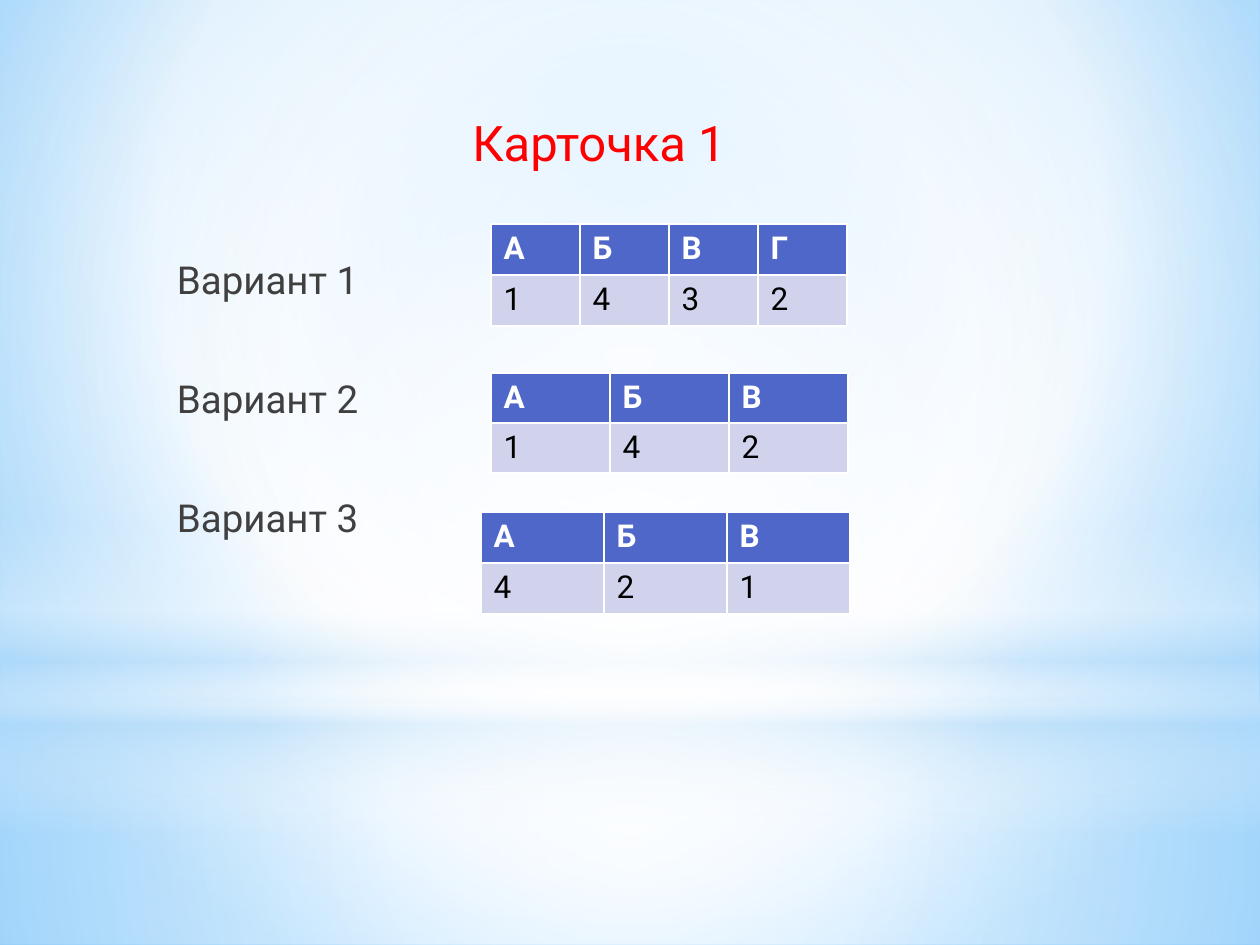
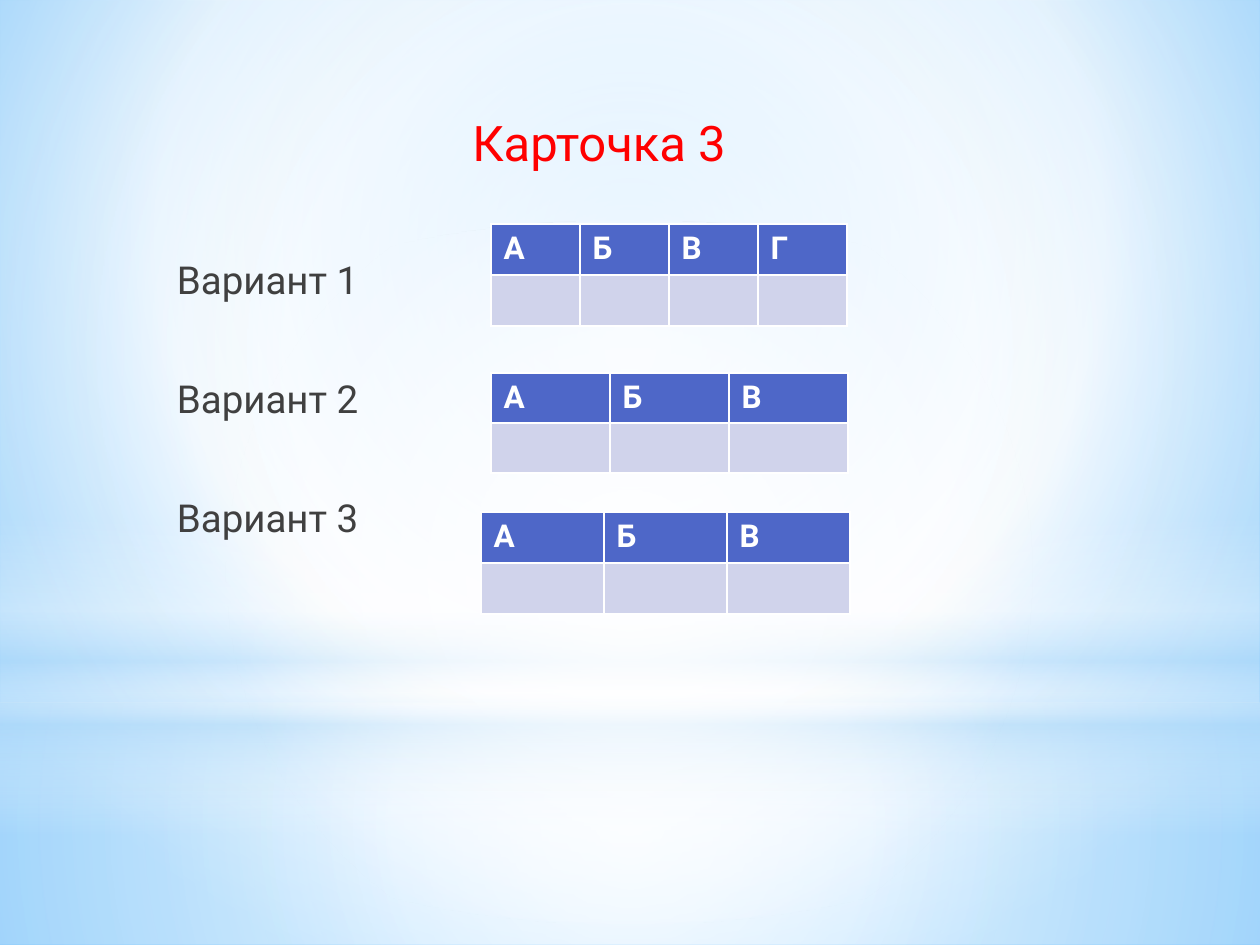
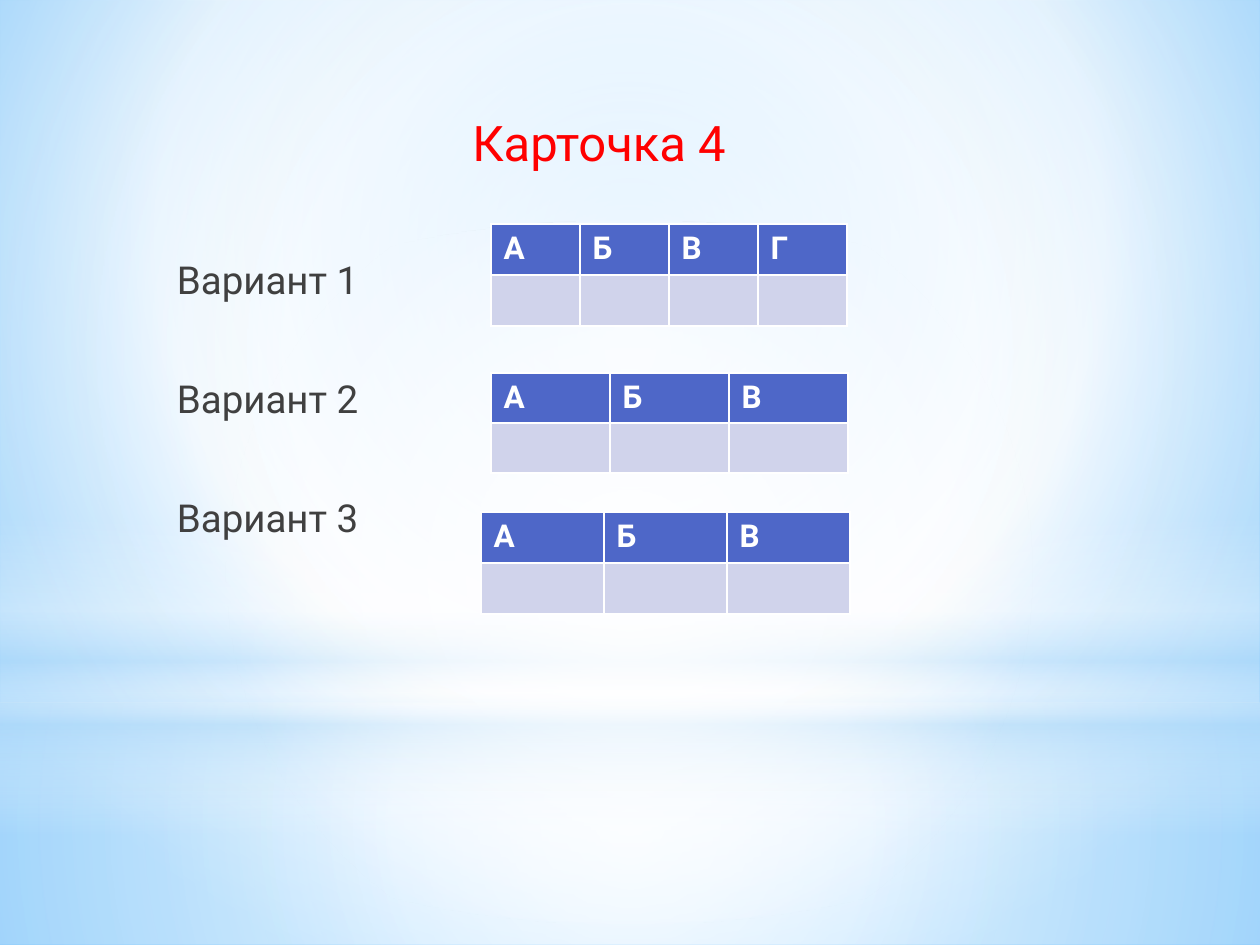
from dataclasses import dataclass

from lxml.etree import SubElement
from pptx import Presentation
from pptx.dml.color import RGBColor
from pptx.enum.shapes import MSO_SHAPE
from pptx.enum.text import MSO_ANCHOR, MSO_AUTO_SIZE, PP_ALIGN
from pptx.oxml.ns import qn
from pptx.slide import Slide, SlideLayout
from pptx.text.text import Font, TextFrame
from pptx.util import Emu, Pt

PX_PER_INCH = 126
EMU_PER_INCH = 914400


@dataclass(frozen=True)
class Theme:
    font: str = "Roboto"
    title: str = "FF0000"
    text: str = "404040"
    header_fill: str = "4E67C8"
    header_text: str = "FFFFFF"
    answer_fill: str = "D0D3EB"
    answer_text: str = "000000"
    white: str = "FFFFFF"
    mist: str = "B4DCFA"
    sky: str = "9ED5FF"
    deep_sky: str = "5BB9FF"
    title_size: int = 28
    list_size: int = 22
    cell_size: int = 18
    list_gap: float = 41.6


THEME = Theme()


@dataclass(frozen=True)
class Box:
    left: int
    top: int
    width: int
    height: int

    def emu(self) -> tuple[Emu, ...]:
        return tuple(px(side) for side in (self.left, self.top, self.width, self.height))


@dataclass(frozen=True)
class Stop:
    position: int
    color: str
    opacity: int = 100


@dataclass(frozen=True)
class Gradient:
    """Radial around the focus insets (left, top, right, bottom), or vertical without them."""
    stops: tuple[Stop, ...]
    focus: tuple[int, int, int, int] | None = (50, 50, 50, 50)


@dataclass(frozen=True)
class Band:
    shape: MSO_SHAPE
    box: Box
    gradient: Gradient


@dataclass(frozen=True)
class AnswerTable:
    left: int
    top: int
    column_width: int
    row_height: int
    letters: str


@dataclass(frozen=True)
class Card:
    title: str
    answers: tuple[str, str, str] = ("", "", "")


SLIDE = Box(0, 0, 1260, 945)
TITLE = Box(158, 101, 882, 90)
VARIANT_LIST = Box(158, 250, 882, 330)
VARIANTS = ("Вариант 1", "Вариант 2", "Вариант 3")

BACKGROUND = Gradient(
    (Stop(0, THEME.sky), Stop(60, THEME.white), Stop(100, THEME.deep_sky)), (20, 10, 20, 60))
BANDS = (
    Band(MSO_SHAPE.RECTANGLE, Box(0, 703, 1260, 242), Gradient(
        (Stop(0, THEME.white, 91), Stop(37, THEME.white, 76), Stop(100, THEME.mist, 79)))),
    Band(MSO_SHAPE.RECTANGLE, Box(0, 0, 1260, 703), Gradient(
        (Stop(0, THEME.white, 89), Stop(48, THEME.white, 62), Stop(100, THEME.mist, 79)))),
    Band(MSO_SHAPE.RECTANGLE, Box(0, 519, 1260, 315), Gradient(
        (Stop(0, THEME.white, 0), Stop(29, THEME.white, 30), Stop(45, THEME.mist, 40),
         Stop(55, THEME.white, 26), Stop(65, THEME.mist, 60), Stop(100, THEME.white, 0)), None)),
    Band(MSO_SHAPE.OVAL, Box(0, 221, 1260, 703), Gradient(
        (Stop(0, THEME.white), Stop(56, THEME.white, 0)))),
)
TABLES = (
    AnswerTable(491, 224, 89, 51, "АБВГ"),
    AnswerTable(491, 373, 119, 50, "АБВ"),
    AnswerTable(481, 512, 123, 51, "АБВ"),
)
CARDS = (
    Card("Карточка 1", ("1432", "142", "421")),
    Card("Карточка 3"),
    Card("Карточка 4"),
)


def px(length: int) -> Emu:
    return Emu(round(length * EMU_PER_INCH / PX_PER_INCH))


def style_font(font: Font, size: int, color: str, bold: bool = False) -> None:
    font.name = THEME.font
    font.size = Pt(size)
    font.bold = bold
    font.color.rgb = RGBColor.from_string(color)


def write_gradient(owner, gradient: Gradient) -> None:
    """Replace the contents of the first gradient fill found in the owner's XML."""
    fill = next(owner.element.iter(qn("a:gradFill")))
    for child in list(fill):
        fill.remove(child)
    stop_list = SubElement(fill, qn("a:gsLst"))
    for stop in gradient.stops:
        mark = SubElement(stop_list, qn("a:gs"), pos=str(stop.position * 1000))
        color = SubElement(mark, qn("a:srgbClr"), val=stop.color)
        if stop.opacity < 100:
            SubElement(color, qn("a:alpha"), val=str(stop.opacity * 1000))
    if gradient.focus is None:
        SubElement(fill, qn("a:lin"), ang="5400000", scaled="0")
    else:
        radial = SubElement(fill, qn("a:path"), path="circle")
        insets = {side: str(inset * 1000) for side, inset in zip("ltrb", gradient.focus)}
        SubElement(radial, qn("a:fillToRect"), **insets)


def decorate_layout(layout: SlideLayout, page: Slide) -> None:
    """Set the layout's background; draw the bands on the page and move them to the layout."""
    layout.background.fill.gradient()
    write_gradient(layout, BACKGROUND)
    for index, band in enumerate(BANDS):
        shape = page.shapes.add_shape(band.shape, *band.box.emu())
        shape.shadow.inherit = False
        shape.line.fill.background()
        shape.fill.gradient()
        write_gradient(shape, band.gradient)
        shape.element.nvSpPr.cNvPr.id = 101 + index
        layout.shapes.element.insert(2 + index, shape.element)


def place_text(placeholder, box: Box, top_margin: int) -> TextFrame:
    placeholder.left, placeholder.top, placeholder.width, placeholder.height = box.emu()
    frame = placeholder.text_frame
    frame.word_wrap = True
    frame.auto_size = MSO_AUTO_SIZE.NONE
    frame.vertical_anchor = MSO_ANCHOR.TOP
    frame.margin_top = px(top_margin)
    return frame


def add_title(page: Slide, title: str) -> None:
    frame = place_text(page.shapes.title, TITLE, 11)
    frame.text = title
    para = frame.paragraphs[0]
    para.alignment = PP_ALIGN.CENTER
    style_font(para.font, THEME.title_size, THEME.title)


def add_variant_list(page: Slide) -> None:
    frame = place_text(page.placeholders[1], VARIANT_LIST, 6)
    frame.margin_left = px(19)
    frame.text = "\n".join(VARIANTS)
    for para in frame.paragraphs:
        para.space_before = Pt(0)
        para.space_after = Pt(THEME.list_gap)
        style_font(para.font, THEME.list_size, THEME.text)
        properties = para._p.get_or_add_pPr()
        properties.set("marL", "0")
        properties.set("indent", "0")
        properties.find(qn("a:defRPr")).addprevious(SubElement(properties, qn("a:buNone")))


def fill_cell(cell, text: str, fill: str, color: str, bold: bool) -> None:
    cell.fill.solid()
    cell.fill.fore_color.rgb = RGBColor.from_string(fill)
    cell.text = text
    style_font(cell.text_frame.paragraphs[0].font, THEME.cell_size, color, bold)


def add_answer_table(page: Slide, layout: AnswerTable, answers: str) -> None:
    count = len(layout.letters)
    box = Box(layout.left, layout.top, count * layout.column_width, 2 * layout.row_height)
    table = page.shapes.add_table(2, count, *box.emu()).table
    for column, (letter, answer) in enumerate(zip(layout.letters, answers.ljust(count))):
        fill_cell(table.cell(0, column), letter, THEME.header_fill, THEME.header_text, True)
        fill_cell(table.cell(1, column), answer.strip(), THEME.answer_fill,
                  THEME.answer_text, False)


def main() -> None:
    deck = Presentation()
    deck.slide_width, deck.slide_height = px(SLIDE.width), px(SLIDE.height)
    layout = deck.slide_layouts[1]
    for card in CARDS:
        page = deck.slides.add_slide(layout)
        add_title(page, card.title)
        add_variant_list(page)
        for table, answers in zip(TABLES, card.answers):
            add_answer_table(page, table, answers)
    decorate_layout(layout, deck.slides[0])
    deck.save("out.pptx")


if __name__ == "__main__":
    main()
